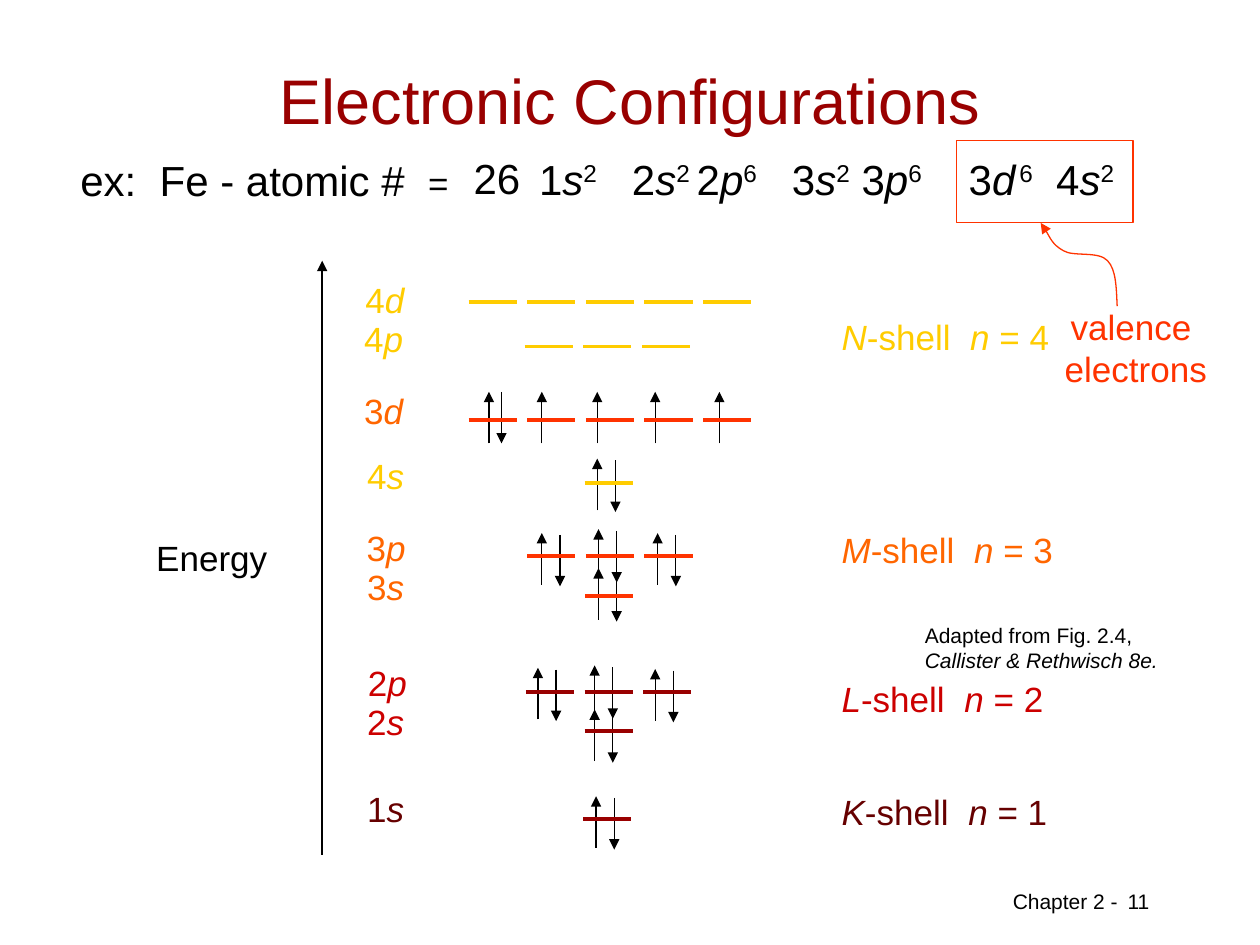
import pptx
import pptx.util
import pptx.dml.color
import pptx.enum.shapes
import pptx.enum.text
import pptx.oxml
import pptx.oxml.ns

Pt = pptx.util.Pt
qn = pptx.oxml.ns.qn
ALIGN = pptx.enum.text.PP_ALIGN
BLACK, RED, DARK_RED = "000000", "FF3300", "990000"
SHELL_COLORS = {1: "660000", 2: "CC0000", 3: "FF6600", 4: "FFCC00"}
BAR_COLORS = {1: DARK_RED, 2: DARK_RED, 3: RED, 4: "FFCC00"}

ORBITALS = {"s": (1, 37.4), "p": (3, 48.2), "d": (5, 48.2)}
LEVELS = [
    (1, "s", 220.3, 446.4, 347, 468),
    (2, "s", 220.3, 396.7, 347.8, 417.6),
    (2, "p", 221.4, 374.4, 347.8, 395.3),
    (3, "s", 220.3, 319.7, 348.1, 340.6),
    (3, "p", 220.7, 297.4, 348.5, 317.5),
    (3, "d", 219.2, 218.9, 348.5, 239.8),
    (4, "s", 220.3, 256.3, 347.8, 275.8),
    (4, "p", 219.2, 177.8, 347, 198),
    (4, "d", 220, 155.5, 348.5, 172.8),
]
SHELLS = [("K", 1, 448.3), ("L", 2, 383.6), ("M", 3, 298.5), ("N", 4, 176.8)]
PAIRS = [
    (340.6, 455), (339.8, 405.4),
    (307.4, 381.6), (339.8, 380.2), (374.4, 382.3),
    (342, 324.7), (309.6, 304.6), (342, 302.4), (375.8, 304.6),
    (341.3, 262.1),
]
UNPAIRED_TOP = 223.9
UP_3D = [279.4, 309.6, 341.3, 374.4, 411.1]
DOWN_3D = 286.6
BAR, BAR_STEP, SPIN, PAIR_GAP = 27.5, 33.5, 29.5, 10.4

CORE = [("1", ""), ("s", "i"), ("2", "^"), ("   2", ""), ("s", "i"),
        ("2 ", "^"), ("2", ""), ("p", "i"), ("6", "^"), ("   3", ""),
        ("s", "i"), ("2", "^"), (" 3", ""), ("p", "i"), ("6", "^")]
VALENCE = [("3", ""), ("d", "i"), (" ", "i", 8), ("6", "^"), ("  4", ""),
           ("s", "i"), ("2", "^")]
CALLOUT = [(638.4, 175), (637.9, 164.9), (637.9, 154.1), (632.9, 149),
           (627.8, 143.3), (613.4, 146.9), (607.7, 143.3),
           (601.2, 139.7), (596.9, 129.6), (594.7, 127.4)]

prs = pptx.Presentation()
prs.slide_width, prs.slide_height = Pt(720), Pt(540)
s = prs.slides.add_slide(prs.slide_layouts[6])


def rgb(color):
    return pptx.dml.color.RGBColor.from_string(color)


def text(x, y, w, h, paragraphs, size, color=BLACK, align=ALIGN.LEFT,
         wrap=True, inset=None):
    sp = s.shapes.add_textbox(Pt(x), Pt(y), Pt(w), Pt(h))
    tf = sp.text_frame
    tf.word_wrap = wrap
    if inset is not None:
        tf.margin_left = tf.margin_right = Pt(inset)
        tf.margin_top = tf.margin_bottom = Pt(inset)
    for i, runs in enumerate(paragraphs):
        p = tf.add_paragraph() if i else tf.paragraphs[0]
        p.alignment = align
        for words, style, *own_size in runs:
            r = p.add_run()
            r.text = words
            r.font.name = "Arial"
            r.font.size = Pt(own_size[0] if own_size else size)
            r.font.color.rgb = rgb(color)
            r.font.italic = "i" in style
            if "^" in style:
                r.font._element.set("baseline", "30000")
    return tf


def arrowhead(sp):
    ln = sp.line._get_or_add_ln()
    ln.append(pptx.oxml.parse_xml(
        f'<a:tailEnd {pptx.oxml.ns.nsdecls("a")} type="triangle"/>'))


def line(x1, y1, x2, y2, color=BLACK, width=0.75, arrow=True):
    sp = s.shapes.add_connector(pptx.enum.shapes.MSO_CONNECTOR.STRAIGHT,
                                Pt(x1), Pt(y1), Pt(x2), Pt(y2))
    sp.line.color.rgb = rgb(color)
    sp.line.width = Pt(width)
    sp._element.spPr.append(pptx.oxml.parse_xml(
        f'<a:effectLst {pptx.oxml.ns.nsdecls("a")}/>'))
    if arrow:
        arrowhead(sp)


def outline(sp):
    sp.shadow.inherit = False
    sp.fill.background()
    sp.line.color.rgb = rgb(RED)
    sp.line.width = Pt(0.75)


def curve(points):
    start, *rest = [(Pt(x), Pt(y)) for x, y in points]
    builder = s.shapes.build_freeform(*start, scale=1.0)
    builder.add_line_segments(rest, close=False)
    sp = builder.convert_to_shape()
    segments = list(sp._element.iter(qn("a:lnTo")))
    for i in range(0, len(segments), 3):
        bezier = pptx.oxml.parse_xml(
            f'<a:cubicBezTo {pptx.oxml.ns.nsdecls("a")}/>')
        segments[i].addprevious(bezier)
        for segment in segments[i:i + 3]:
            bezier.append(segment[0])
            segment.getparent().remove(segment)
    outline(sp)
    arrowhead(sp)


def spin_up(x, top):
    line(x, top + SPIN, x, top)


def spin_down(x, top):
    line(x, top, x, top + SPIN)


text(571.7, 504, 74.2, 21.6, [[("Chapter 2 -", "")]], 12, wrap=False)
text(604.1, 504.4, 92.9, 28, [[("11", "")]], 12, align=ALIGN.CENTER)
title = text(30, 30, 660, 54, [[("Electronic Configurations", "")]], 36,
             DARK_RED, ALIGN.CENTER)
title.vertical_anchor = pptx.enum.text.MSO_ANCHOR.MIDDLE
text(38.9, 85, 612, 62.6,
     [[("ex:  Fe - atomic #  ", ""), ("=", "", 20)]], 24)

for x, top in PAIRS:
    spin_up(x, top)
    spin_down(x + PAIR_GAP, top + 1)
for x in UP_3D:
    spin_up(x, UNPAIRED_TOP)
spin_down(DOWN_3D, UNPAIRED_TOP)

text(249.8, 83.5, 68.4, 36, [[("26", "")]], 24, align=ALIGN.CENTER)
frame = s.shapes.add_shape(pptx.enum.shapes.MSO_SHAPE.RECTANGLE,
                           Pt(546.5), Pt(80.2), Pt(101), Pt(46.8))
outline(frame)
text(601.2, 171, 95.8, 55.4, [[("valence ", "")], [("electrons", "")]],
     20, RED, ALIGN.CENTER, wrap=False)
curve(CALLOUT)
text(528.5, 355.7, 149.8, 28.8,
     [[("Adapted from Fig. 2.4, ", ""), ("Callister & Rethwisch 8e.", "i")]],
     12, inset=0)

line(184.1, 488.4, 184.1, 149)
text(82.1, 303.1, 77.8, 31, [[("Energy", "")]], 20, align=ALIGN.CENTER,
     wrap=False)

for shell, orbital, label_x, label_y, bar_x, bar_y in LEVELS:
    count, width = ORBITALS[orbital]
    for i in range(count):
        left = bar_x + (i - (count - 1) / 2) * BAR_STEP - BAR / 2
        line(left, bar_y, left + BAR, bar_y, BAR_COLORS[shell], 2.25, False)
    text(label_x - width / 2, label_y, width, 31,
         [[(str(shell), ""), (orbital, "i")]], 20, SHELL_COLORS[shell],
         ALIGN.CENTER)

for name, n, top in SHELLS:
    text(473.8, top, 145, 31,
         [[(name, "i"), ("-shell  ", ""), ("n ", "i"), (f"= {n}", "")]],
         20, SHELL_COLORS[n])

text(301, 84.2, 270.7, 36, [CORE], 24)
text(546.5, 84.2, 105, 36, [VALENCE], 24)

prs.save("out.pptx")
